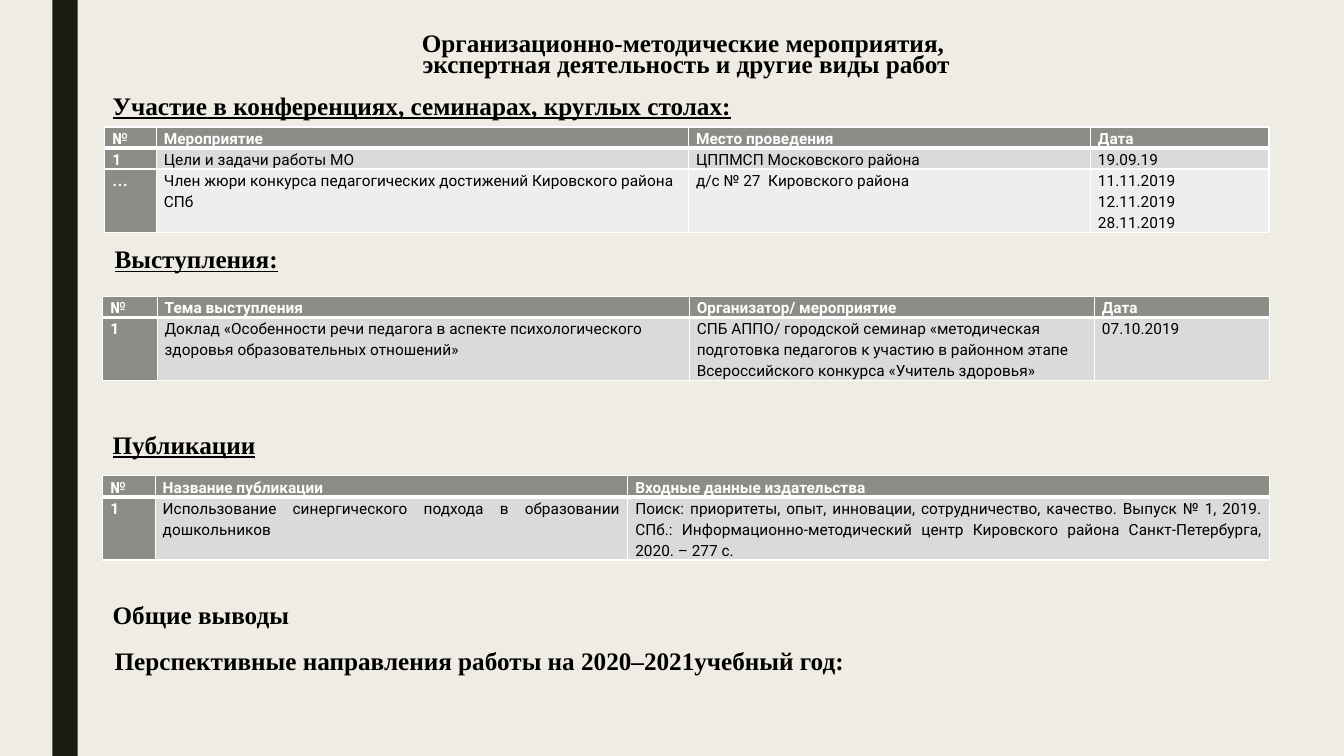
from lxml.etree import SubElement
from pptx import Presentation
from pptx.dml.color import RGBColor
from pptx.enum.shapes import MSO_SHAPE
from pptx.enum.text import MSO_ANCHOR, MSO_AUTO_SIZE, PP_ALIGN as Align
from pptx.oxml.ns import qn
from pptx.util import Cm, Pt

IVORY = RGBColor(0xEF, 0xED, 0xE3)
DARK_OLIVE = RGBColor(0x19, 0x1B, 0x0E)
GRAY = RGBColor(0x8C, 0x8D, 0x86)
BAND = RGBColor(0xDA, 0xDB, 0xD9)
LIGHT_BAND = RGBColor(0xEE, 0xEE, 0xED)
WHITE = RGBColor(0xFF, 0xFF, 0xFF)
BLACK = RGBColor(0, 0, 0)
SERIF = "Times New Roman"
SANS = "Roboto"
LINE_HEIGHT = 0.53

EVENTS = [
    ["№", "Мероприятие", "Место проведения", "Дата"],
    ["1", "Цели и задачи работы МО", "ЦППМСП Московского района", "19.09.19"],
    ["…", "Член жюри конкурса педагогических достижений Кировского района СПб",
     "д/с № 27  Кировского района", "11.11.2019\n12.11.2019\n28.11.2019"],
]
TALKS = [
    ["№", "Тема выступления", "Организатор/ мероприятие", "Дата"],
    ["1", "Доклад «Особенности речи педагога в аспекте психологического "
          "здоровья образовательных отношений»",
     "СПБ АППО/ городской семинар «методическая подготовка педагогов к участию "
     "в районном этапе Всероссийского конкурса «Учитель здоровья»",
     "07.10.2019"],
]
PUBLICATIONS = [
    ["№", "Название публикации", "Входные данные издательства"],
    ["1", "Использование синергического подхода в образовании дошкольников",
     "Поиск: приоритеты, опыт, инновации, сотрудничество, качество. "
     "Выпуск № 1, 2019. СПб.: Информационно-методический центр Кировского "
     "района Санкт-Петербурга, 2020. – 277 с."],
]


def write(frame, text, size=18, font=SERIF, color=BLACK, bold=True,
          underline=None, align=Align.LEFT, spacing=15, before=0, after=0):
    for index, line in enumerate(text.split("\n")):
        paragraph = frame.add_paragraph() if index else frame.paragraphs[0]
        paragraph.alignment = align
        paragraph.line_spacing = Pt(spacing)
        paragraph.space_before = Pt(before)
        paragraph.space_after = Pt(after)
        run = paragraph.add_run()
        run.text = line
        run.font.size = Pt(size)
        run.font.name = font
        run.font.bold = bold
        run.font.underline = underline
        run.font.color.rgb = color


def add_title(slide, text):
    title = slide.shapes.title
    title.left, title.top, title.width, title.height = (
        Cm(2.59), Cm(0.79), Cm(29.41), Cm(1.32))
    frame = title.text_frame
    frame.auto_size = MSO_AUTO_SIZE.NONE
    frame.vertical_anchor = MSO_ANCHOR.TOP
    write(frame, text, align=Align.CENTER)


def add_heading(slide, text, left, top, width, wrap=False, **style):
    heading = slide.shapes.add_textbox(Cm(left), Cm(top), Cm(width), Cm(0.8))
    heading.text_frame.word_wrap = wrap
    write(heading.text_frame, text, **style)


def add_side_stripe(slide, height):
    stripe = slide.shapes.add_shape(
        MSO_SHAPE.RECTANGLE, Cm(1.32), 0, Cm(0.64), height)
    stripe.shadow.inherit = False
    stripe.fill.solid()
    stripe.fill.fore_color.rgb = DARK_OLIVE
    stripe.line.fill.background()


def set_borders(cell, top, bottom):
    properties = cell._tc.get_or_add_tcPr()
    widths = {"a:lnL": 1, "a:lnR": 1, "a:lnT": top, "a:lnB": bottom}
    for position, (tag, width) in enumerate(widths.items()):
        border = SubElement(properties, qn(tag), w=str(Pt(width)))
        fill = SubElement(border, qn("a:solidFill"))
        SubElement(fill, qn("a:srgbClr"), val=str(WHITE))
        properties.insert(position, border)


def add_report_table(slide, rows, left, top, widths, line_counts,
                     align=Align.LEFT):
    table = slide.shapes.add_table(
        len(rows), len(widths), Cm(left), Cm(top),
        Cm(sum(widths)), Cm(LINE_HEIGHT * sum(line_counts))).table
    for column, width in zip(table.columns, widths):
        column.width = Cm(width)
    for r, (entries, lines) in enumerate(zip(rows, line_counts)):
        table.rows[r].height = Cm(LINE_HEIGHT * lines)
        for c, entry in enumerate(entries):
            cell = table.cell(r, c)
            cell.margin_left = cell.margin_right = Cm(0.19)
            cell.margin_top = cell.margin_bottom = 0
            is_label = r == 0 or c == 0
            cell.fill.solid()
            cell.fill.fore_color.rgb = (
                GRAY if is_label else BAND if r % 2 else LIGHT_BAND)
            set_borders(cell, 3 if r == 1 else 1, 3 if r == 0 else 1)
            write(cell.text_frame, entry, size=11,
                  font=SERIF if entry == "…" else SANS,
                  color=WHITE if is_label else BLACK,
                  bold=is_label, align=align)


def main():
    deck = Presentation()
    deck.slide_width, deck.slide_height = Cm(33.87), Cm(19.05)
    slide = deck.slides.add_slide(deck.slide_layouts[5])
    slide.background.fill.solid()
    slide.background.fill.fore_color.rgb = IVORY

    add_side_stripe(slide, deck.slide_height)
    add_title(slide, "Организационно-методические мероприятия, \n"
                     "экспертная деятельность и другие виды работ")

    add_heading(slide, "Участие в конференциях, семинарах, круглых столах:",
                2.59, 2.38, 29.41, wrap=True, underline=True)
    add_report_table(slide, EVENTS, 2.64, 3.2,
                     [1.3, 13.41, 10.13, 4.5], [1, 1, 3])

    section = {"underline": True, "align": Align.JUSTIFY}
    add_heading(slide, "Выступления:", 2.64, 6.25, 4.67, **section)
    add_report_table(slide, TALKS, 2.59, 7.47,
                     [1.37, 13.41, 10.21, 4.42], [1, 3])

    add_heading(slide, "Публикации", 2.59, 10.92, 4.14, **section)
    add_report_table(slide, PUBLICATIONS, 2.59, 11.99,
                     [1.32, 11.91, 16.18], [1, 3], align=Align.JUSTIFY)

    closing = {"align": Align.JUSTIFY, "spacing": 17, "before": 12, "after": 3}
    add_heading(slide, "Общие выводы", 2.59, 15.14, 5, **closing)
    add_heading(slide,
                "Перспективные направления работы на 2020–2021учебный год:",
                2.64, 16.31, 29.36, wrap=True, **closing)
    deck.save("out.pptx")


if __name__ == "__main__":
    main()
